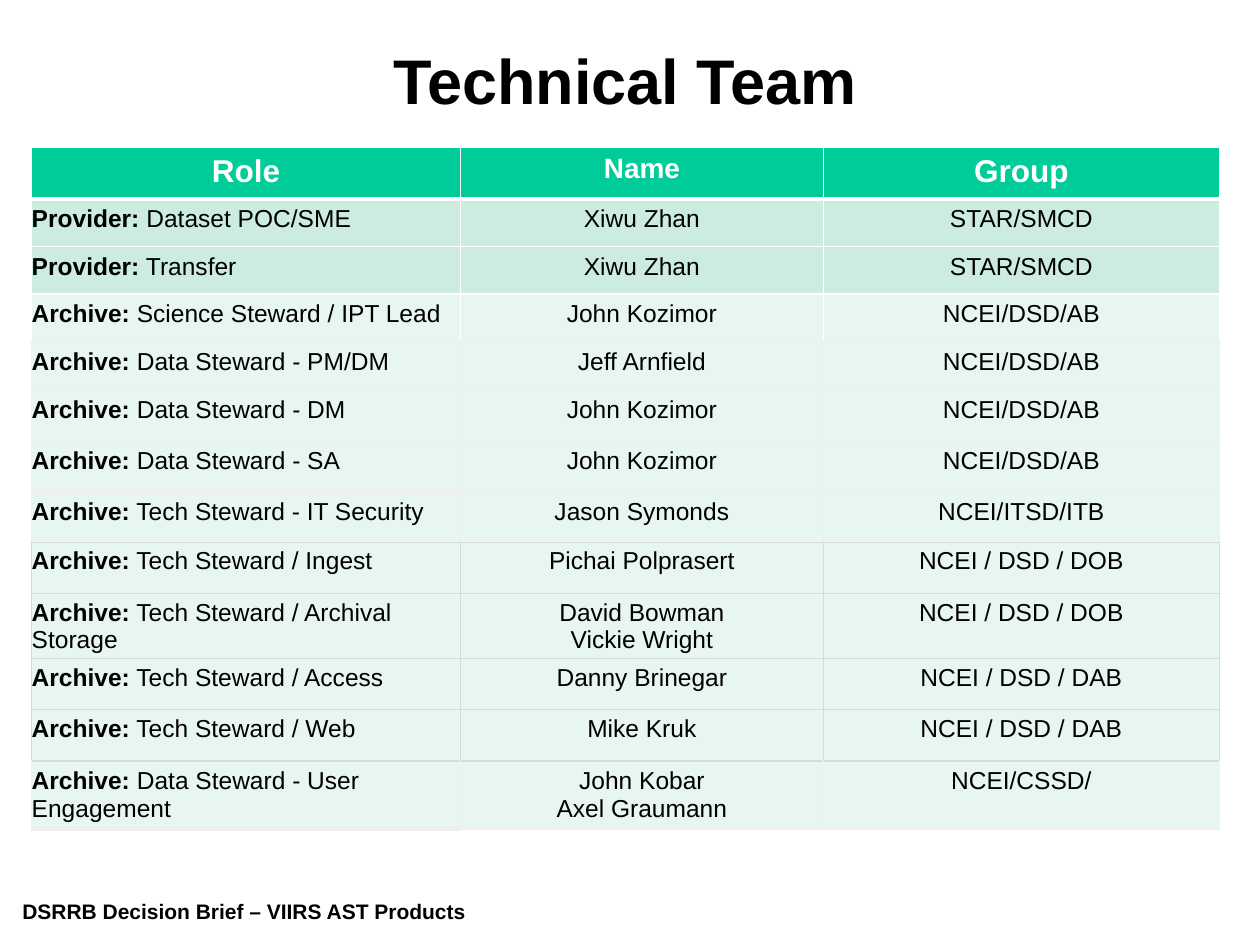
import pptx
import pptx.dml.color
import pptx.enum.text
import pptx.oxml
import pptx.oxml.ns
import pptx.util

Cm = pptx.util.Cm
Pt = pptx.util.Pt
RGB = pptx.dml.color.RGBColor
ALIGN = pptx.enum.text.PP_ALIGN
ANCHOR = pptx.enum.text.MSO_ANCHOR

BLACK = RGB(0x00, 0x00, 0x00)
WHITE = RGB(0xFF, 0xFF, 0xFF)
GREEN = RGB(0x00, 0xCC, 0x99)
MINT = RGB(0xCB, 0xEC, 0xDE)
PALE_MINT = RGB(0xE7, 0xF6, 0xEF)
LIGHT = RGB(0xEF, 0xEF, 0xEF)
GREY = RGB(0xD9, 0xD9, 0xD9)

HEADER = [("Role", 18), ("Name", 16), ("Group", 18)]
TEAM = [
    ("Provider:", "Dataset POC/SME", "Xiwu Zhan", "STAR/SMCD"),
    ("Provider:", "Transfer", "Xiwu Zhan", "STAR/SMCD"),
    ("Archive:", "Science Steward / IPT Lead", "John Kozimor", "NCEI/DSD/AB"),
    ("Archive:", "Data Steward - PM/DM", "Jeff Arnfield", "NCEI/DSD/AB"),
    ("Archive:", "Data Steward - DM", "John Kozimor", "NCEI/DSD/AB"),
    ("Archive:", "Data Steward - SA", "John Kozimor", "NCEI/DSD/AB"),
    ("Archive:", "Tech Steward - IT Security", "Jason Symonds", "NCEI/ITSD/ITB"),
    ("Archive:", "Tech Steward / Ingest", "Pichai Polprasert", "NCEI / DSD / DOB"),
    ("Archive:", "Tech Steward / Archival Storage", "David Bowman\nVickie Wright",
     "NCEI / DSD / DOB"),
    ("Archive:", "Tech Steward / Access", "Danny Brinegar", "NCEI / DSD / DAB"),
    ("Archive:", "Tech Steward / Web", "Mike Kruk", "NCEI / DSD / DAB"),
    ("Archive:", "Data Steward - User Engagement", "John Kobar\nAxel Graumann",
     "NCEI/CSSD/"),
]
COL_WIDTHS = [8.64, 7.32, 7.98]
ROW_HEIGHTS = [1.04] + [0.96] * 4 + [1.03] * 8
ROW_FILLS = [GREEN] + [MINT] * 2 + [PALE_MINT] * 10
SIDE_LINES = ([(WHITE, 1)] * 4 + [(LIGHT, 1)] * 4
              + [(GREY, 0.75)] * 4 + [(LIGHT, 1)])
ROW_LINES = ([(WHITE, 1), (WHITE, 3), (WHITE, 1), (WHITE, 1)]
             + [(LIGHT, 1)] * 3 + [(LIGHT, 3)] + [(GREY, 0.75)] * 5 + [(LIGHT, 3)])


def set_attrs(obj, values):
    for name, value in values.items():
        setattr(obj, name, value)


def add_run(p, text, size, color=BLACK, bold=False):
    r = p.add_run()
    r.text = text
    set_attrs(r.font, {"name": "Arial", "size": Pt(size), "bold": bold})
    r.font.color.rgb = color


def add_title(s, text):
    sp = s.shapes.title
    set_attrs(sp, {"left": Cm(0.64), "top": Cm(0.43),
                   "width": Cm(23.93), "height": Cm(2.34)})
    sp.text_frame.vertical_anchor = ANCHOR.MIDDLE
    p = sp.text_frame.paragraphs[0]
    p.alignment = ALIGN.CENTER
    add_run(p, text, 36, bold=True)


def add_footer(s, text):
    sp = s.shapes.add_textbox(Cm(0.2), Cm(17.98), Cm(15.44), Cm(0.76))
    sp.text_frame.word_wrap = True
    add_run(sp.text_frame.paragraphs[0], text, 12, bold=True)


def add_border(cell, side, line):
    color, width = line
    ns = pptx.oxml.ns.nsdecls("a")
    cell._tc.get_or_add_tcPr().append(pptx.oxml.parse_xml(
        f'<a:ln{side} {ns} w="{Pt(width)}"><a:solidFill>'
        f'<a:srgbClr val="{color}"/></a:solidFill></a:ln{side}>'))


def row_line(i, col):
    color, width = ROW_LINES[i]
    if color == LIGHT and col > 0:
        width = 1
    return color, width


def format_cell(cell, row, col):
    margin = Cm(0.1) if 8 <= row <= 11 else Cm(0.13)
    set_attrs(cell, {"margin_left": 0, "margin_right": 0,
                     "margin_top": margin, "margin_bottom": margin})
    side = SIDE_LINES[row]
    borders = {"L": side, "R": side,
               "T": row_line(row, col), "B": row_line(row + 1, col)}
    for name, line in borders.items():
        add_border(cell, name, line)
    cell.fill.solid()
    cell.fill.fore_color.rgb = ROW_FILLS[row]


def write_centered(cell, text, size, color=BLACK, bold=False):
    tf = cell.text_frame
    for i, line in enumerate(text.split("\n")):
        p = tf.add_paragraph() if i else tf.paragraphs[0]
        p.alignment = ALIGN.CENTER
        add_run(p, line, size, color, bold)


def write_role(cell, side, role):
    p = cell.text_frame.paragraphs[0]
    add_run(p, side, 14, bold=True)
    add_run(p, " " + role, 14)


def add_team_table(s):
    table = s.shapes.add_table(len(ROW_HEIGHTS), len(COL_WIDTHS), Cm(0.64), Cm(2.97),
                               Cm(sum(COL_WIDTHS)), Cm(sum(ROW_HEIGHTS))).table
    table.horz_banding = False
    for column, width in zip(table.columns, COL_WIDTHS):
        column.width = Cm(width)
    for i, height in enumerate(ROW_HEIGHTS):
        table.rows[i].height = Cm(height)
        for j in range(len(COL_WIDTHS)):
            format_cell(table.cell(i, j), i, j)
    for j, (text, size) in enumerate(HEADER):
        write_centered(table.cell(0, j), text, size, WHITE, True)
    for i, (side, role, names, group) in enumerate(TEAM, 1):
        write_role(table.cell(i, 0), side, role)
        write_centered(table.cell(i, 1), names, 14)
        write_centered(table.cell(i, 2), group, 14)


def main():
    prs = pptx.Presentation()
    set_attrs(prs, {"slide_width": Cm(25.4), "slide_height": Cm(19.05)})
    s = prs.slides.add_slide(prs.slide_layouts[5])
    add_title(s, "Technical Team")
    add_team_table(s)
    add_footer(s, "DSRRB Decision Brief – VIIRS AST Products")
    prs.save("out.pptx")


if __name__ == "__main__":
    main()
